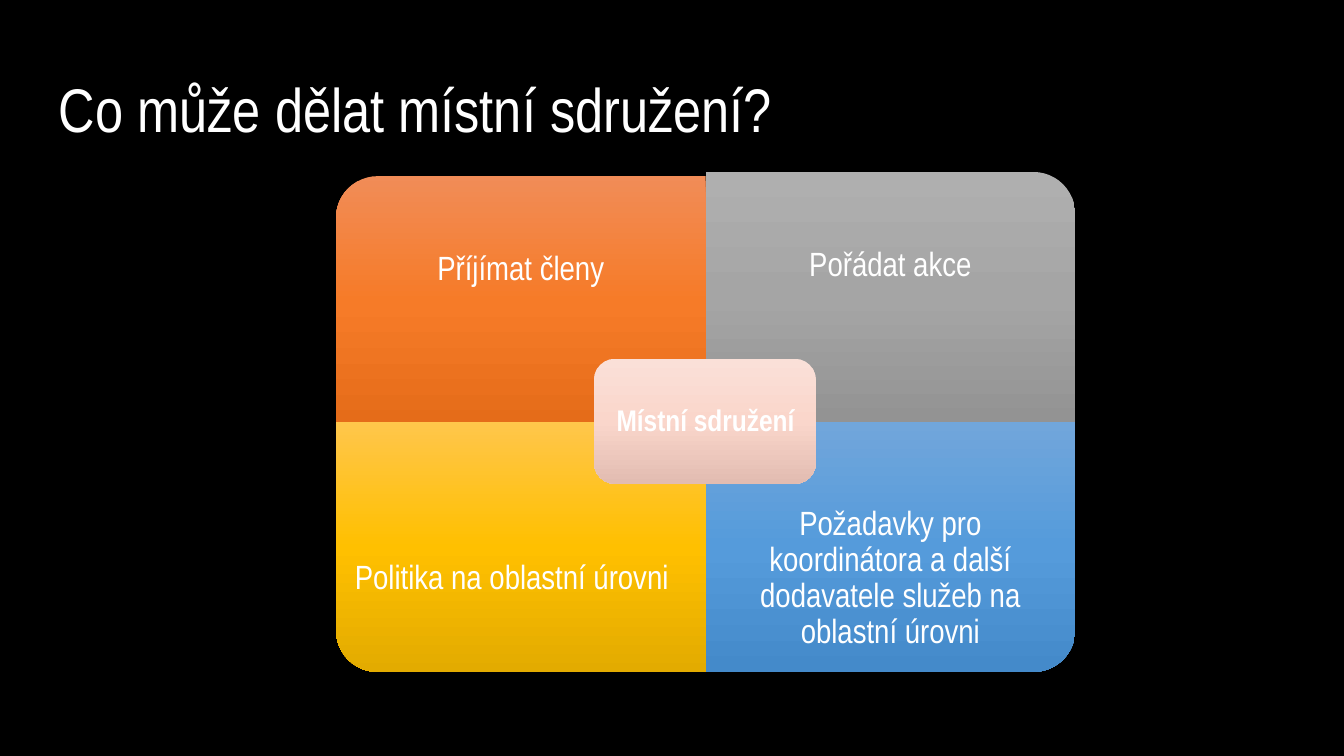
from lxml.etree import SubElement as Sub
from pptx import Presentation
from pptx.dml.color import RGBColor as RGB
from pptx.enum.shapes import MSO_SHAPE as Form
from pptx.enum.text import MSO_ANCHOR as Anchor, PP_ALIGN as Align
from pptx.oxml.ns import qn
from pptx.util import Inches, Pt

FONT = "Arial Narrow"
COLORS = {
    "back": "000000",
    "text": "FFFFFF",
    "orange": ("F18C57", "F67B28", "E56C19"),
    "gray": ("AFAFAF", "A5A5A5", "939393"),
    "gold": ("FFC64B", "FFC000", "E3AB00"),
    "blue": ("71A6DB", "559BDB", "448ACA"),
    "pink": ("FAE0D8", "FAD6CB", "E2BCB1"),
}
MID_X, MID_Y = 5.25, 3.14
WIDE, HIGH = 2.75, 1.86
TEXT_H = 1.39
TILES = [
    ("Příjímat členy", "orange", 0, 0, 270, 0.03),
    ("Pořádat akce", "gray", 1, 0, 0, 0),
    ("Politika na oblastní úrovni\t", "gold", 0, 1, 180, 0),
    ("Požadavky pro koordinátora a další dodavatele služeb na oblastní úrovni",
     "blue", 1, 1, 90, 0),
]


def add_text(slide, text, box, size, inset, align=Align.CENTER,
             anchor=Anchor.MIDDLE, bold=False):
    frame = slide.shapes.add_textbox(*map(Inches, box)).text_frame
    frame.word_wrap = True
    frame.vertical_anchor = anchor
    frame.margin_left = frame.margin_right = Inches(inset)
    frame.margin_top = frame.margin_bottom = Inches(inset)
    line = frame.paragraphs[0]
    line.alignment = align
    line.line_spacing = 0.9
    run = line.add_run()
    run.text = text
    run.font.name = FONT
    run.font.size = Pt(size)
    run.font.bold = bold
    run.font.color.rgb = RGB.from_string(COLORS["text"])


def shade(shape, name):
    shape.fill.gradient()
    grad = shape.fill._xPr.find(qn("a:gradFill"))
    grad.clear()
    grad.set("rotWithShape", "0")
    stops = Sub(grad, qn("a:gsLst"))
    for place, color in zip((0, 50000, 100000), COLORS[name]):
        stop = Sub(stops, qn("a:gs"), pos=str(place))
        Sub(stop, qn("a:srgbClr"), val=color)
    Sub(grad, qn("a:lin"), ang="5400000", scaled="0")


def add_block(slide, form, name, box, turn=0):
    shape = slide.shapes.add_shape(form, *map(Inches, box))
    shape.rotation = turn
    shape.shadow.inherit = False
    shape.line.fill.background()
    shade(shape, name)


def add_tile(slide, text, name, col, row, turn, drop):
    left = MID_X - WIDE * (1 - col)
    top = MID_Y - HIGH * (1 - row) + drop
    wide, high = (HIGH, WIDE) if turn % 180 else (WIDE, HIGH)
    box = (left + (WIDE - wide) / 2, top + (HIGH - high) / 2, wide, high)
    add_block(slide, Form.ROUND_1_RECTANGLE, name, box, turn)
    text_top = top + (HIGH - TEXT_H) * row
    add_text(slide, text, (left, text_top, WIDE, TEXT_H), 18, 0.14)


def main():
    deck = Presentation()
    deck.slide_width = Inches(10)
    deck.slide_height = Inches(10 * 9 / 16)
    slide = deck.slides.add_slide(deck.slide_layouts[6])
    fill = slide.background.fill
    fill.solid()
    fill.fore_color.rgb = RGB.from_string(COLORS["back"])
    add_text(slide, "Co může dělat místní sdružení?", (0.34, 0.49, 9.32, 0.67),
             33, 0.1, Align.LEFT, Anchor.TOP)
    for tile in TILES:
        add_tile(slide, *tile)
    add_block(slide, Form.ROUNDED_RECTANGLE, "pink", (4.42, 2.67, 1.65, 0.93))
    add_text(slide, "Místní sdružení", (4.47, 2.72, 1.56, 0.84), 16, 0.07,
             bold=True)
    deck.save("out.pptx")


if __name__ == "__main__":
    main()
